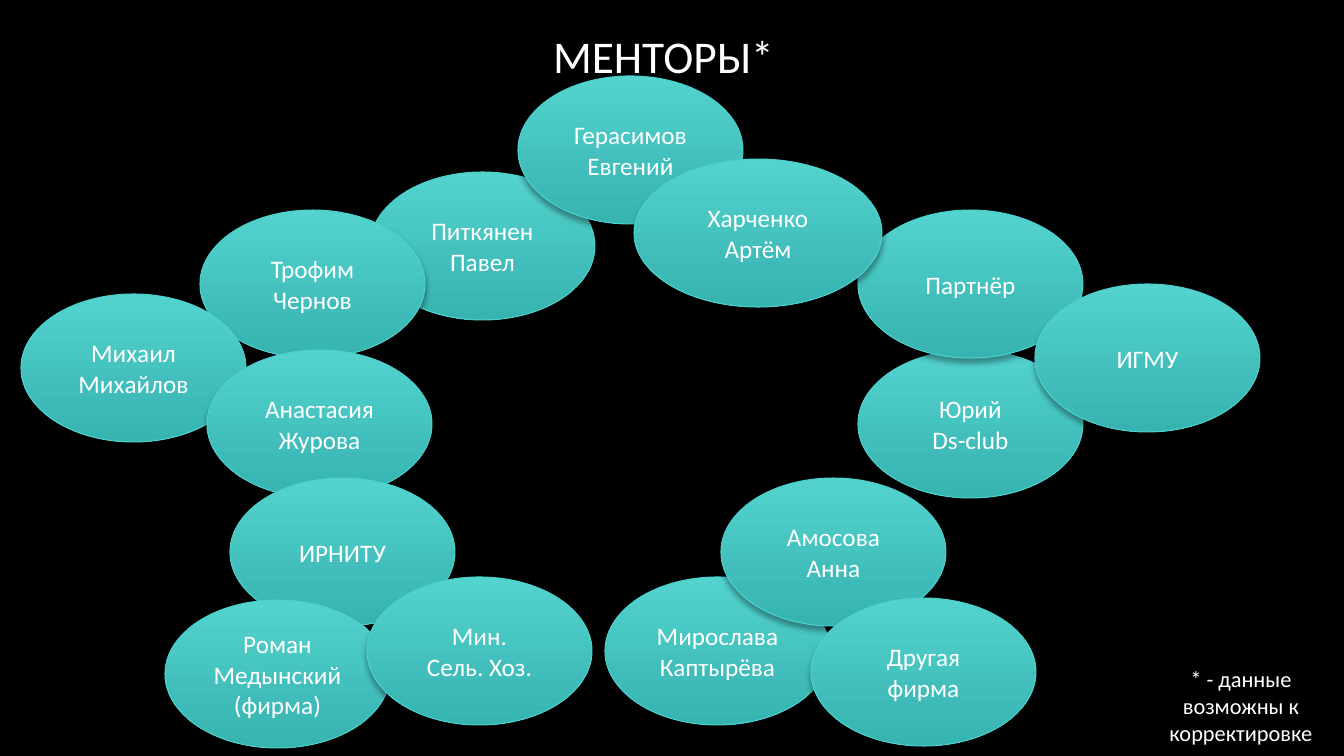
import pptx
import pptx.util
import pptx.dml.color
import pptx.enum.shapes
import pptx.enum.text
import pptx.oxml
import pptx.oxml.ns

SCALE = 914400 / 100.8
OVAL_W, OVAL_H = 225, 148
SHADOW = (
    f'<a:outerShdw {pptx.oxml.ns.nsdecls("a")} blurRad="50800" dist="38100" '
    'dir="5400000" rotWithShape="0"><a:srgbClr val="000000">'
    '<a:alpha val="35000"/></a:srgbClr></a:outerShdw>'
)


def box(*lengths):
    return [pptx.util.Emu(round(n * SCALE)) for n in lengths]


def write(sp, text, size, anchor):
    tf = sp.text_frame
    tf.word_wrap = True
    tf.vertical_anchor = anchor
    tf.text = text
    for p in tf.paragraphs:
        p.alignment = pptx.enum.text.PP_ALIGN.CENTER
        for r in p.runs:
            r.font.name = "Calibri"
            r.font.size = pptx.util.Pt(size)
            r.font.color.rgb = pptx.dml.color.RGBColor.from_string("FFFFFF")


prs = pptx.Presentation()
prs.slide_width, prs.slide_height = box(1344, 756)
s = prs.slides.add_slide(prs.slide_layouts[6])
s.background.fill.solid()
s.background.fill.fore_color.rgb = pptx.dml.color.RGBColor.from_string("000000")

MIDDLE = pptx.enum.text.MSO_ANCHOR.MIDDLE
title = s.shapes.add_textbox(*box(251, 26, 825, 58))
write(title, "МЕНТОРЫ*", 32.4, MIDDLE)

mentors = [
    (370, 172, OVAL_W, "Питкянен\nПавел"),
    (200, 210, OVAL_W, "Трофим\nЧернов"),
    (518, 76, OVAL_W, "Герасимов\nЕвгений"),
    (605, 577, OVAL_W, "Мирослава\nКаптырёва"),
    (858, 350, OVAL_W, "Юрий\nDs-club"),
    (21, 294, OVAL_W, "Михаил\nМихайлов"),
    (207, 350, OVAL_W, "Анастасия\nЖурова"),
    (230, 478, OVAL_W, "ИРНИТУ"),
    (858, 210, OVAL_W, "Партнёр"),
    (1035, 284, OVAL_W, "ИГМУ"),
    (165, 600, OVAL_W, "Роман Медынский\n(фирма)"),
    (367, 577, OVAL_W, "Мин.\nСель. Хоз."),
    (721, 478, OVAL_W, "Амосова\nАнна"),
    (634, 159, 248, "Харченко Артём"),
    (811, 598, OVAL_W, "Другая\nфирма"),
]
for x, y, w, name in mentors:
    sp = s.shapes.add_shape(pptx.enum.shapes.MSO_SHAPE.OVAL, *box(x, y, w, OVAL_H))
    sp.fill.gradient()
    sp.fill.gradient_angle = 270
    for stop, position, color in zip(sp.fill.gradient_stops, (0, 1), ("53D2CE", "37B3B0")):
        stop.position = position
        stop.color.rgb = pptx.dml.color.RGBColor.from_string(color)
    sp.line.color.rgb = pptx.dml.color.RGBColor.from_string("49D1CD")
    sp.line.width = pptx.util.Pt(0.75)
    sp.shadow.inherit = False
    effects = sp.element.spPr.find(pptx.oxml.ns.qn("a:effectLst"))
    effects.append(pptx.oxml.parse_xml(SHADOW))
    write(sp, name, 18, MIDDLE)

note = s.shapes.add_textbox(*box(1140, 660, 202, 92))
write(note, "* - данные возможны к корректировке", 16, pptx.enum.text.MSO_ANCHOR.TOP)

prs.save("out.pptx")
